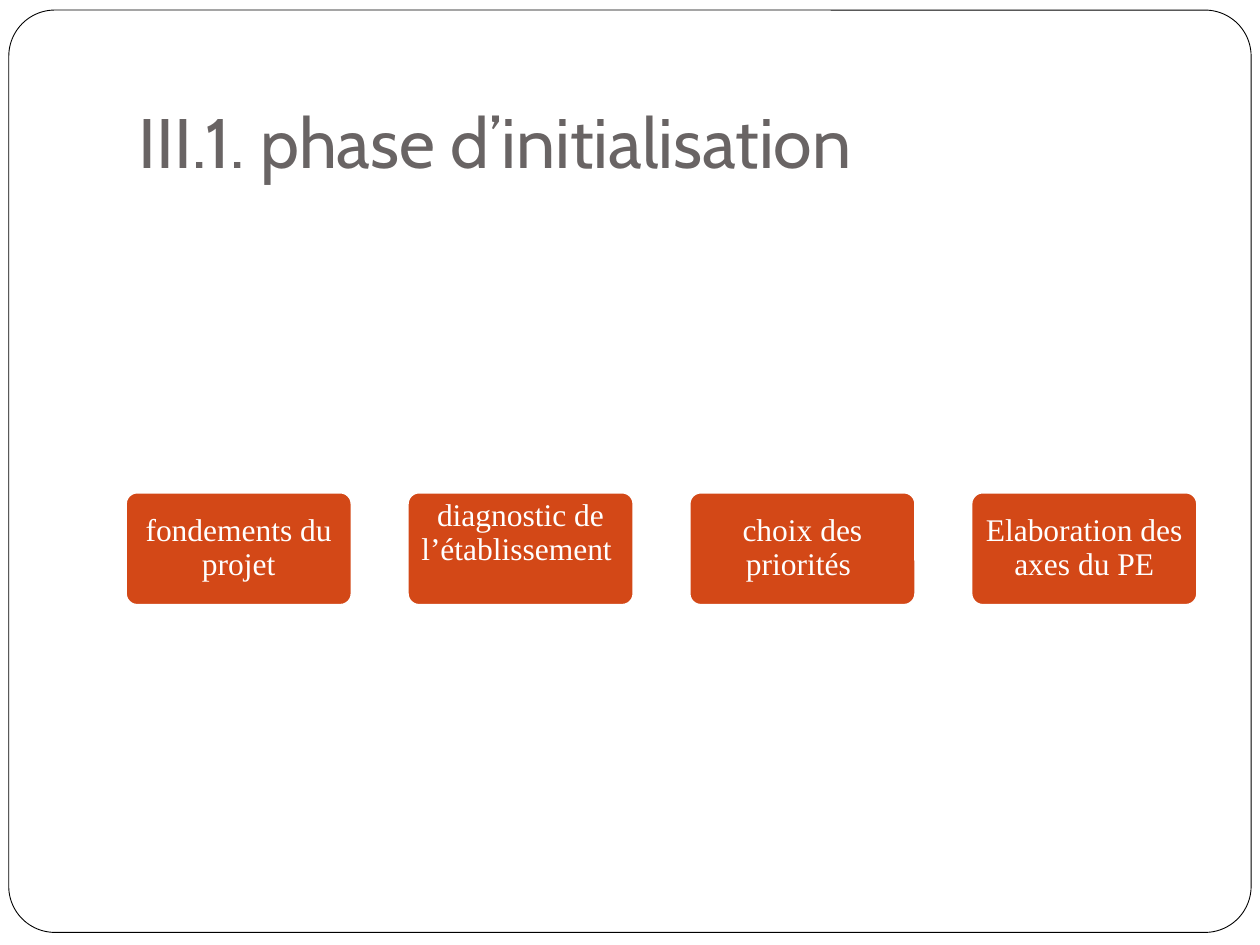
import dataclasses

import pptx
import pptx.dml.color
import pptx.enum.shapes
import pptx.enum.text
import pptx.util
from pptx.util import Inches


@dataclasses.dataclass(frozen=True)
class Theme:
    """Colours, fonts and type sizes of the slide."""

    paper: str = "FFFFFF"
    border: str = "000000"
    title: str = "696464"
    step: str = "D34817"
    step_text: str = "FFFFFF"
    title_font: str = "Cabin"
    step_font: str = "Times New Roman"
    title_size: int = 40
    step_size: int = 18


THEME = Theme()
ANCHOR = pptx.enum.text.MSO_ANCHOR
ALIGN = pptx.enum.text.PP_ALIGN
STEPS = (
    ("fondements du projet", ANCHOR.MIDDLE),
    ("diagnostic de l’établissement ", ANCHOR.TOP),
    ("choix des priorités ", ANCHOR.MIDDLE),
    ("Elaboration des axes du PE", ANCHOR.MIDDLE),
)


def colour(value):
    """Return the colour object for a hex value."""
    return pptx.dml.color.RGBColor.from_string(value)


def set_margins(text_frame, left, top, right, bottom):
    """Set the four inner margins of a text frame."""
    text_frame.margin_left, text_frame.margin_top = left, top
    text_frame.margin_right, text_frame.margin_bottom = right, bottom


def format_text(text_frame, text, name, size, text_colour, alignment):
    """Write one paragraph and format its run."""
    text_frame.text = text
    text_frame.word_wrap = True
    text_frame.auto_size = pptx.enum.text.MSO_AUTO_SIZE.NONE
    paragraph = text_frame.paragraphs[0]
    paragraph.alignment = alignment
    font = paragraph.runs[0].font
    font.name = name
    font.size = pptx.util.Pt(size)
    font.color.rgb = colour(text_colour)
    return paragraph


def add_rounded_box(slide, box, corner, fill, line, line_width):
    """Add a flat rounded rectangle in the given box."""
    shape = slide.shapes.add_shape(
        pptx.enum.shapes.MSO_SHAPE.ROUNDED_RECTANGLE, *box
    )
    shape.adjustments[0] = corner
    shape.shadow.inherit = False
    shape.fill.solid()
    shape.fill.fore_color.rgb = colour(fill)
    shape.line.color.rgb = colour(line)
    shape.line.width = pptx.util.Pt(line_width)
    return shape


def add_frame(slide, box):
    """Place the rounded border behind everything else."""
    frame = add_rounded_box(slide, box, 0.05, THEME.paper, THEME.border, 0.5)
    slide.shapes._spTree.insert(2, frame._element)


def add_title(slide, box, text):
    """Move and format the title placeholder."""
    title = slide.shapes.title
    title.left, title.top, title.width, title.height = box
    text_frame = title.text_frame
    format_text(
        text_frame, text, THEME.title_font, THEME.title_size, THEME.title, ALIGN.LEFT
    )
    text_frame.vertical_anchor = ANCHOR.BOTTOM
    set_margins(text_frame, Inches(0.1), Inches(0.05), Inches(0.1), Inches(0.1))


def add_steps(slide, box, steps):
    """Spread the steps over the box, with gaps a quarter of a step wide."""
    left, top, width, height = box
    step_width = int(width / (len(steps) + (len(steps) - 1) / 4))
    pitch = step_width * 5 // 4
    for index, (text, anchor) in enumerate(steps):
        step_box = (left + index * pitch, top, step_width, height)
        step = add_rounded_box(slide, step_box, 0.1, THEME.step, THEME.paper, 1)
        text_frame = step.text_frame
        paragraph = format_text(
            text_frame, text, THEME.step_font, THEME.step_size,
            THEME.step_text, ALIGN.CENTER,
        )
        paragraph.line_spacing = 0.9
        text_frame.vertical_anchor = anchor
        set_margins(
            text_frame, Inches(0.04), Inches(0.03), Inches(0.04), Inches(0.03)
        )


def main():
    """Build and save the presentation."""
    presentation = pptx.Presentation()
    presentation.slide_width, presentation.slide_height = Inches(10), Inches(7.5)
    slide = presentation.slides.add_slide(presentation.slide_layouts[5])
    add_frame(slide, (Inches(0.07), Inches(0.08), Inches(9.86), Inches(7.32)))
    add_title(
        slide,
        (Inches(1), Inches(0.3), Inches(8.5), Inches(1.25)),
        "III.1. phase d’initialisation",
    )
    add_steps(slide, (Inches(1), Inches(3.91), Inches(8.5), Inches(0.89)), STEPS)
    presentation.save("out.pptx")


if __name__ == "__main__":
    main()
